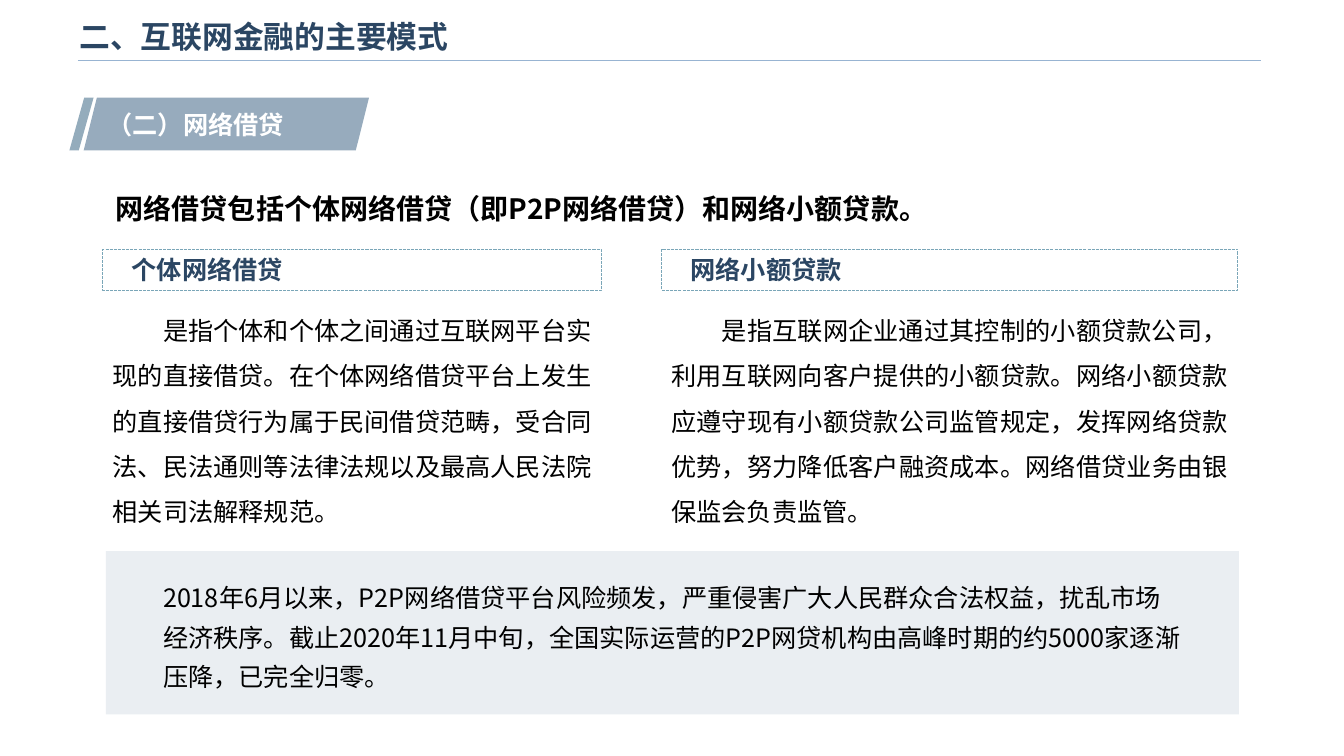
import pptx
import pptx.dml.color
import pptx.enum.dml
import pptx.enum.shapes
import pptx.enum.text
import pptx.oxml
import pptx.oxml.ns
import pptx.util
from pptx.dml.color import RGBColor
from pptx.enum.shapes import MSO_SHAPE
from pptx.enum.text import MSO_ANCHOR, MSO_AUTO_SIZE, PP_ALIGN
from pptx.util import Cm

TITLE = "二、互联网金融的主要模式"
SECTION = "（二）网络借贷"
LEAD = "网络借贷包括个体网络借贷（即P2P网络借贷）和网络小额贷款。"
COLUMNS = [
    {"left": 2.59, "width": 12.57, "heading": "个体网络借贷",
     "body": "是指个体和个体之间通过互联网平台实现的直接借贷。在个体网络借贷平台上发生的直接借贷行为"
             "属于民间借贷范畴，受合同法、民法通则等法律法规以及最高人民法院相关司法解释规范。"},
    {"left": 16.67, "width": 14.53, "heading": "网络小额贷款",
     "body": "是指互联网企业通过其控制的小额贷款公司，利用互联网向客户提供的小额贷款。网络小额贷款应遵守"
             "现有小额贷款公司监管规定，发挥网络贷款优势，努力降低客户融资成本。网络借贷业务由银保监会负责监管。"},
]
NOTICE = ("2018年6月以来，P2P网络借贷平台风险频发，严重侵害广大人民群众合法权益，扰乱市场经济秩序。"
          "截止2020年11月中旬，全国实际运营的P2P网贷机构由高峰时期的约5000家逐渐压降，已完全归零。")
TAG_PARTS = [
    (1.75, 0.61, 0.613, RGBColor(0x94, 0xAC, 0xBC)),
    (2.11, 7.19, 0.25, RGBColor(0x97, 0xAB, 0xBD)),
]

FONT = "Noto Sans CJK SC"
NAVY = RGBColor(0x2B, 0x46, 0x63)
BLACK = RGBColor(0, 0, 0)
WHITE = RGBColor(0xFF, 0xFF, 0xFF)
RULE = RGBColor(0x98, 0xB4, 0xD2)
FRAME = RGBColor(0x7A, 0xA6, 0xB8)
PANEL = RGBColor(0xEA, 0xEE, 0xF2)


def place(*lengths):
    """Turn centimetre numbers into lengths."""
    return [Cm(length) for length in lengths]


def write(shape, text, size=18, color=BLACK, bold=False, latin=FONT, align=PP_ALIGN.LEFT,
          spacing=1.0, after=0, margin=0, first=0, anchor=MSO_ANCHOR.TOP,
          fit=MSO_AUTO_SIZE.SHAPE_TO_FIT_TEXT):
    """Write one formatted paragraph into a shape."""
    frame = shape.text_frame
    frame.word_wrap = True
    frame.auto_size = fit
    frame.vertical_anchor = anchor
    para = frame.paragraphs[0]
    para.alignment = align
    para.line_spacing = spacing
    para.space_before = pptx.util.Pt(0)
    para.space_after = pptx.util.Pt(after)
    properties = para._p.get_or_add_pPr()
    properties.set("marL", str(Cm(margin)))
    properties.set("indent", str(Cm(first)))
    span = para.add_run()
    span.text = text
    span.font.name = latin
    span.font.size = pptx.util.Pt(size)
    span.font.bold = bold
    span.font.color.rgb = color
    east_asian = pptx.oxml.parse_xml(
        f'<a:ea {pptx.oxml.ns.nsdecls("a")} typeface="{FONT}"/>')
    span.font._element.append(east_asian)


def add_block(shapes, kind, box, fill=None, line=None):
    """Add a flat preset shape with an optional fill and dashed outline."""
    shape = shapes.add_shape(kind, *place(*box))
    shape.shadow.inherit = False
    if fill is None:
        shape.fill.background()
    else:
        shape.fill.solid()
        shape.fill.fore_color.rgb = fill
    if line is None:
        shape.line.fill.background()
    else:
        shape.line.color.rgb = line
        shape.line.width = pptx.util.Pt(0.75)
        shape.line.dash_style = pptx.enum.dml.MSO_LINE.SQUARE_DOT
    return shape


def add_text(page, box, text, **style):
    """Add a text box holding one formatted paragraph."""
    write(page.shapes.add_textbox(*place(*box)), text, **style)


def add_header(page):
    """Fill the title, draw the rule below it and add the section tag."""
    title = page.shapes.title
    title.left, title.top, title.width, title.height = place(1.75, 0.23, 27.2, 1.35)
    write(title, TITLE, size=22, color=NAVY, bold=True, latin="Arial",
          anchor=MSO_ANCHOR.MIDDLE, fit=MSO_AUTO_SIZE.NONE)
    rule = page.shapes.add_connector(
        pptx.enum.shapes.MSO_CONNECTOR.STRAIGHT, *place(1.96, 1.53, 31.78, 1.53))
    rule.line.color.rgb = RULE
    rule.line.width = pptx.util.Pt(1)
    rule._element.spPr.append(
        pptx.oxml.parse_xml(f'<a:effectLst {pptx.oxml.ns.nsdecls("a")}/>'))
    tag = page.shapes.add_group_shape()
    for left, width, slant, color in TAG_PARTS:
        part = add_block(tag.shapes, MSO_SHAPE.PARALLELOGRAM, (left, 2.46, width, 1.33), fill=color)
        part.adjustments[0] = slant
    add_text(page, (2.46, 2.62, 6.32, 1.02), SECTION, color=WHITE, bold=True)


def add_columns(page):
    """Add each framed heading with its explanation below."""
    for column in COLUMNS:
        left, width = column["left"], column["width"]
        heading = add_block(page.shapes, MSO_SHAPE.RECTANGLE, (left, 6.28, width, 1.03), line=FRAME)
        write(heading, column["heading"], color=NAVY, bold=True, margin=0.48)
        add_text(page, (left, 7.44, width, 6.02), column["body"], align=PP_ALIGN.JUSTIFY,
                 spacing=1.5, after=10, first=1.27)


def main():
    """Build the slide and save it."""
    deck = pptx.Presentation()
    deck.slide_width, deck.slide_height = place(33.87, 19.05)
    page = deck.slides.add_slide(deck.slide_layouts[5])
    add_header(page)
    add_text(page, (2.67, 4.45, 26.14, 1.37), LEAD, size=20, bold=True, spacing=1.3)
    add_columns(page)
    add_block(page.shapes, MSO_SHAPE.RECTANGLE, (2.67, 13.89, 28.55, 4.11), fill=PANEL)
    add_text(page, (3.86, 14.33, 26.14, 3.25), NOTICE, spacing=1.3)
    deck.save("out.pptx")


if __name__ == "__main__":
    main()
